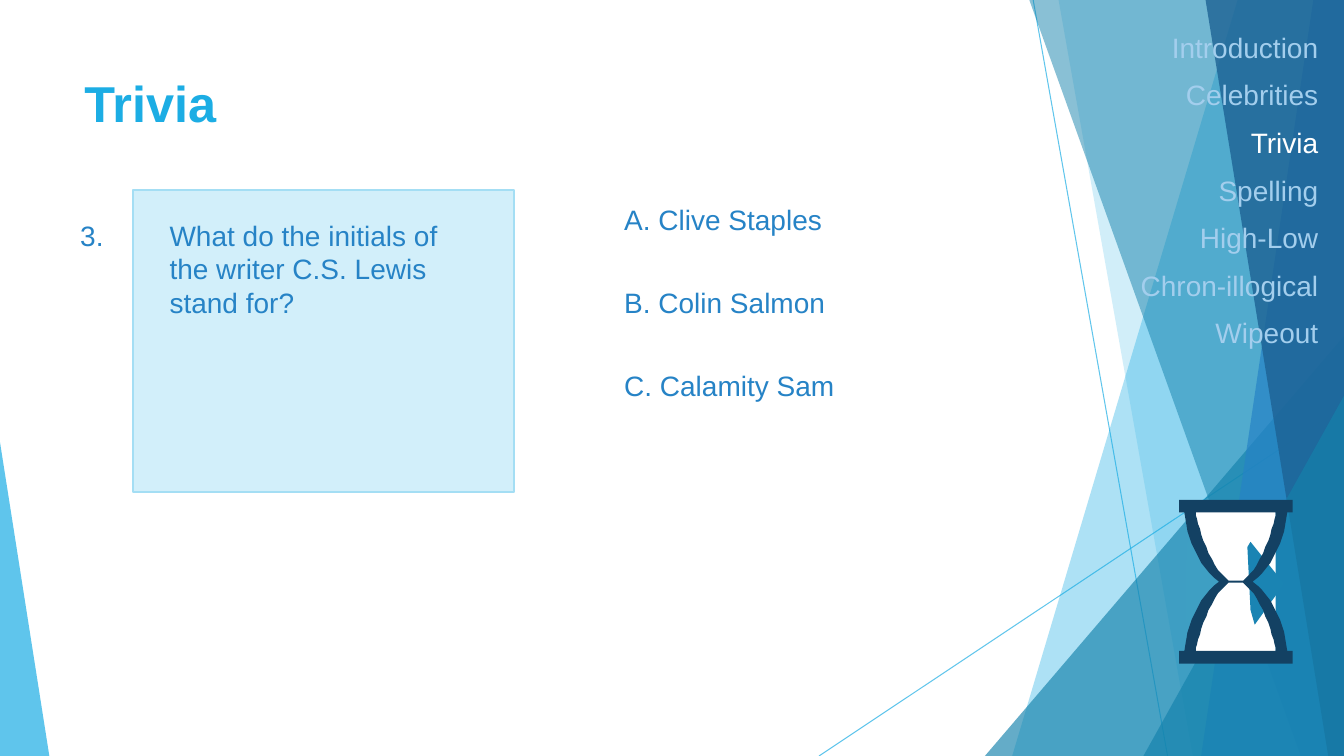
import dataclasses

import pptx
import pptx.dml.color
import pptx.enum.shapes
import pptx.enum.text
import pptx.oxml
import pptx.oxml.ns
import pptx.util

PX = 9525  # EMU per px, 96 px to the inch
SLIDE_W, SLIDE_H = 1280, 720


@dataclasses.dataclass(frozen=True)
class Theme:
    font: str = "Arial"
    title_size: int = 36
    body_size: int = 20
    nav_gap: int = 10
    sky: str = "1CADE4"
    teal: str = "1482AC"
    blue: str = "2683C6"
    navy: str = "1D6294"
    panel: str = "D2EFFA"
    panel_edge: str = "A4DEF4"
    nav_idle: str = "A3CEED"
    white: str = "FFFFFF"
    glass_frame: str = "134163"
    glass_left: str = "3E9FC3"
    glass_right: str = "1A84B3"


def add_child(parent, tag, **attributes):
    child = pptx.oxml.parse_xml(f"<a:{tag} {pptx.oxml.ns.nsdecls('a')}/>")
    for key, value in attributes.items():
        child.set(key, value)
    parent.append(child)


def paint(fill, color, opacity=100):
    fill.solid()
    fill.fore_color.rgb = pptx.dml.color.RGBColor.from_string(color)
    if opacity < 100:
        swatch = fill._xPr.find(".//" + pptx.oxml.ns.qn("a:srgbClr"))
        add_child(swatch, "alpha", val=str(opacity * 1000))


def bezier(start, control_1, control_2, end, steps=12):
    """Points along a cubic curve, both ends included."""
    points = []
    for step in range(steps + 1):
        t = step / steps
        weights = ((1 - t) ** 3, 3 * t * (1 - t) ** 2, 3 * t * t * (1 - t), t ** 3)
        corners = (start, control_1, control_2, end)
        points.append(tuple(sum(w * c[axis] for w, c in zip(weights, corners))
                            for axis in (0, 1)))
    return points


class SlideBuilder:
    def __init__(self, slide, theme):
        self.shapes = slide.shapes
        self.theme = theme

    def finish(self, shape, color, opacity, edge):
        shape.shadow.inherit = False
        paint(shape.fill, color, opacity)
        if edge:
            paint(shape.line.fill, edge)
            shape.line.width = pptx.util.Pt(1.5)
        else:
            shape.line.fill.background()

    def preset(self, kind, box, color, opacity=100, edge=None, adjust=None):
        shape = self.shapes.add_shape(kind, *(PX * length for length in box))
        if adjust is not None:
            shape.adjustments[0] = adjust
        self.finish(shape, color, opacity, edge)

    def outline(self, contours, color, opacity=100):
        """One closed shape; contours inside the first one are holes."""
        first, *holes = contours
        builder = self.shapes.build_freeform(*first[0], scale=PX)
        builder.add_line_segments(first[1:], close=True)
        for hole in holes:
            builder.move_to(*hole[0])
            builder.add_line_segments(hole[1:], close=True)
        self.finish(builder.convert_to_shape(), color, opacity, None)

    def line(self, start, end, color, opacity):
        connector = self.shapes.add_connector(
            pptx.enum.shapes.MSO_CONNECTOR.STRAIGHT,
            *(PX * length for length in start + end))
        paint(connector.line.fill, color, opacity)
        connector.line.width = pptx.util.Pt(0.75)
        add_child(connector._element.spPr, "effectLst")

    def text(self, box, lines, color, size=None, bold=False, wrap=True,
             align=pptx.enum.text.PP_ALIGN.LEFT, gap=0, active=None):
        """Text box with one paragraph a line; the active line is white."""
        frame = self.shapes.add_textbox(*(PX * length for length in box)).text_frame
        frame.word_wrap = wrap
        frame.text = "\n".join(lines)
        for paragraph in frame.paragraphs:
            paragraph.alignment = align
            paragraph.space_before = pptx.util.Pt(gap)
            font = paragraph.font
            font.name = self.theme.font
            font.size = pptx.util.Pt(size or self.theme.body_size)
            font.bold = bold
            shown = self.theme.white if paragraph.text == active else color
            font.color.rgb = pptx.dml.color.RGBColor.from_string(shown)


def draw_backdrop(page):
    theme = page.theme
    triangle = pptx.enum.shapes.MSO_SHAPE.ISOSCELES_TRIANGLE

    def band(top_x, bottom_x, color, opacity):
        """Facet from a slanted left side to the right slide edge."""
        page.outline([[(top_x, -1), (SLIDE_W, -1), (SLIDE_W, SLIDE_H),
                       (bottom_x, SLIDE_H)]], color, opacity)

    def wedge(left, top, width, color, opacity, apex):
        page.preset(triangle, (left, top, width, SLIDE_H - top), color, opacity,
                    adjust=apex)

    page.line((984, 0), (1112, SLIDE_H), theme.sky, 70)
    page.line((SLIDE_W, 387), (780, SLIDE_H), theme.sky, 70)
    band(1179, 964, theme.sky, 36)
    band(1008, 1136, theme.sky, 20)
    wedge(938, 320, 342, theme.teal, 66, 1)
    band(980, 1239, theme.teal, 50)
    band(1251, 1144, theme.blue, 70)
    band(1148, 1265, theme.navy, 80)
    wedge(1089, 377, 191, theme.teal, 66, 1)
    wedge(0, 421, 47, theme.sky, 70, 0)


def draw_hourglass(page):
    theme = page.theme
    center_x, center_y = 1177, 554

    def place(points, flip_x=1, flip_y=1):
        return [(center_x + flip_x * x, center_y + flip_y * y) for x, y in points]

    # Upper right quarter, measured from the neck
    rim = [(54, -78), (54, -66)] + bezier((49, -66), (47, -44), (35, -13), (16, 0))
    bulb = bezier((38, -66), (37, -57), (28, -23), (13, -7)) + [(7, -1)]

    frame = (place(rim) + place(rim[::-1], flip_y=-1)
             + place(rim, -1, -1) + place(rim[::-1], flip_x=-1))
    bulbs = [place(bulb, 1, side) + place(bulb[::-1], -1, side) for side in (1, -1)]

    page.preset(pptx.enum.shapes.MSO_SHAPE.RECTANGLE, (1139, 487, 76, 133), theme.white)
    page.outline([[(1191, 516), (1188, 521), (1191, 581), (1195, 595), (1223, 556)]],
                 theme.glass_right)
    page.outline([[(1134, 513), (1130, 518), (1129, 593), (1138, 593), (1165, 553)]],
                 theme.glass_left)
    page.outline([frame] + bulbs, theme.glass_frame)


def main():
    theme = Theme()
    deck = pptx.Presentation()
    deck.slide_width, deck.slide_height = SLIDE_W * PX, SLIDE_H * PX
    page = SlideBuilder(deck.slides.add_slide(deck.slide_layouts[6]), theme)

    draw_backdrop(page)
    page.preset(pptx.enum.shapes.MSO_SHAPE.RECTANGLE, (127, 181, 363, 288),
                theme.panel, edge=theme.panel_edge)
    page.text((71, 64, 902, 138), ["Trivia"], theme.sky, theme.title_size, bold=True)
    page.text((152, 203, 317, 107),
              ["What do the initials of the writer C.S. Lewis stand for?"], theme.blue)
    page.text((67, 203, 43, 42), ["3."], theme.blue, wrap=False)

    answers = ("A. Clive Staples", "B. Colin Salmon", "C. Calamity Sam")
    for row, answer in enumerate(answers):
        page.text((585, 188 + 79 * row, 318, 42), [answer], theme.blue)

    rounds = ["Introduction", "Celebrities", "Trivia", "Spelling", "High-Low",
              "Chron-illogical", "Wipeout"]
    page.text((1014, 24, 251, 434), rounds, theme.nav_idle, gap=theme.nav_gap,
              align=pptx.enum.text.PP_ALIGN.RIGHT, active="Trivia")
    draw_hourglass(page)
    deck.save("out.pptx")


if __name__ == "__main__":
    main()
